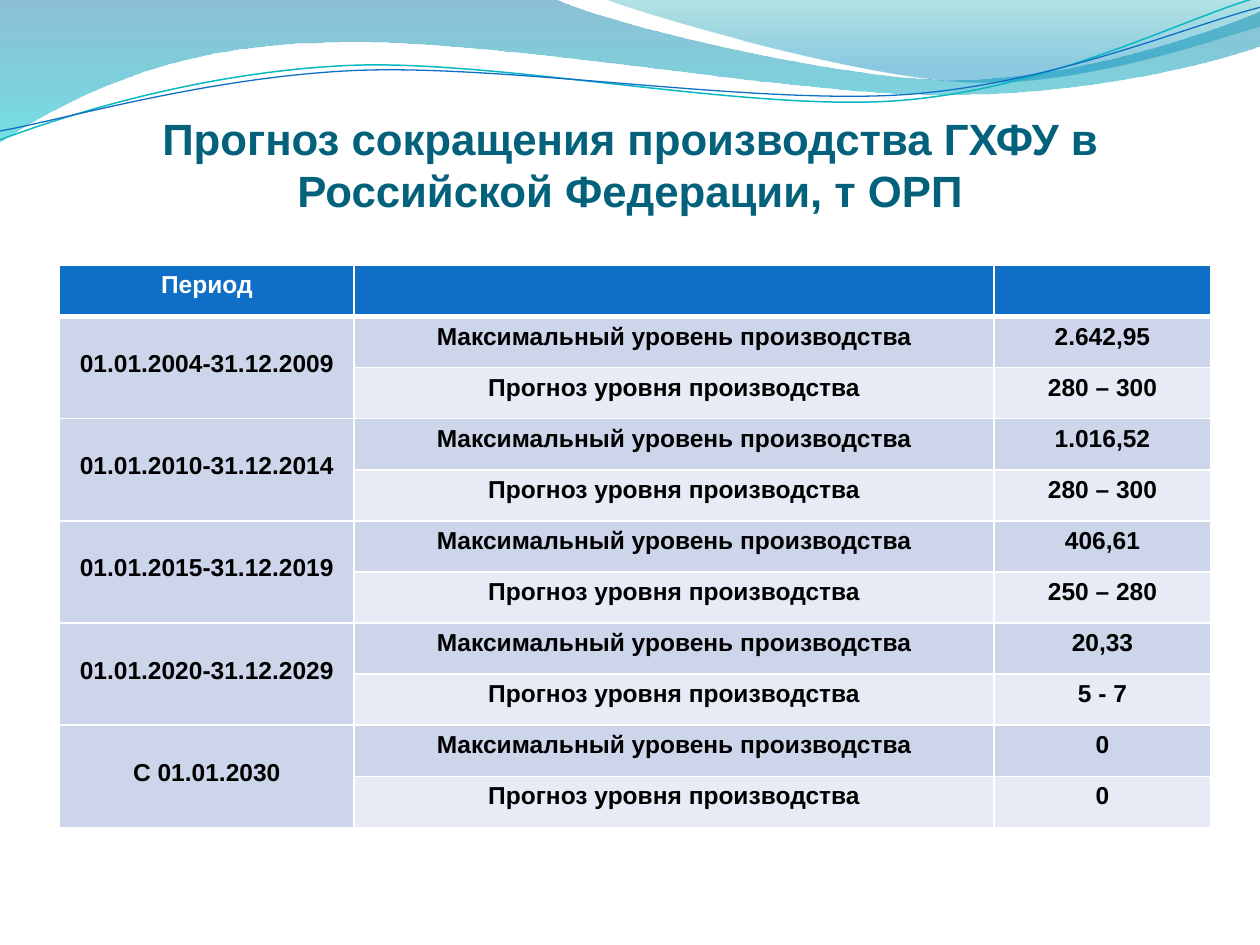
import lxml.etree
import pptx
import pptx.dml.color
import pptx.enum.text
import pptx.oxml
import pptx.oxml.ns
import pptx.util

Cm, Pt = pptx.util.Cm, pptx.util.Pt
RGB = pptx.dml.color.RGBColor
qn = pptx.oxml.ns.qn
CENTER = pptx.enum.text.PP_ALIGN.CENTER

WHITE = RGB(0xFF, 0xFF, 0xFF)
BLACK = RGB(0, 0, 0)
BLUE = RGB(0x0F, 0x6F, 0xC6)
TEAL = RGB(0x0A, 0xB8, 0xBF)
NAVY = RGB(0x04, 0x61, 0x7B)
DARK = RGB(0xCC, 0xD5, 0xEA)
PALE = RGB(0xE7, 0xEB, 0xF5)
STEEL = RGB(0x00, 0x74, 0xA1)
CYAN = RGB(0x00, 0xC6, 0xCF)
GREEN = RGB(0x00, 0xA1, 0xA9)
SKY = RGB(0x00, 0x8B, 0xBF)

# Outlines in cm: a start, then straight (2 numbers) or Bezier (6) parts
BAND = [(0, -0.03), (11.18, -0.03), (12.09, 0.43, 16.87, 1.6, 19.25, 1.6),
        (21.67, 1.6, 24.33, 0.66, 25.4, 0.23), (25.43, 0.91),
        (24.97, 1.12, 22.1, 1.93, 18.95, 1.91),
        (15.8, 1.91, 9.7, 0.71, 6.53, 0.86),
        (3.28, 0.89, 1.17, 2.11, -0.03, 2.87)]
VEIL = [(12.17, -0.03), (12.93, 0.28, 17.32, 1.57, 19.53, 1.65),
        (21.74, 1.75, 24.41, 0.81, 25.4, 0.53), (25.4, 0)]
UPPER = [(0, 2.82), (1.22, 2.36, 4.01, 1.45, 7.04, 1.32),
         (10.03, 1.19, 15.06, 2.26, 18.11, 2.03),
         (21.16, 1.8, 23.83, 0.38, 25.35, -0.05)]
LOWER = [(0, 2.64), (1.19, 2.44, 4.17, 1.55, 7.19, 1.42),
         (10.24, 1.3, 15.16, 2.11, 18.21, 1.91),
         (21.23, 1.7, 23.9, 0.53, 25.4, 0.15)]

TITLE = "Прогноз сокращения производства ГХФУ в Российской Федерации, т ОРП"
LEVELS = ["Максимальный уровень производства", "Прогноз уровня производства"]
DATA = [("01.01.2004-31.12.2009", "2.642,95", "280 – 300"),
        ("01.01.2010-31.12.2014", "1.016,52", "280 – 300"),
        ("01.01.2015-31.12.2019", "406,61", "250 – 280"),
        ("01.01.2020-31.12.2029", "20,33", "5 - 7"),
        ("С 01.01.2030", "0", "0")]
WIDTHS = [5.94, 12.9, 4.37]
ROW = 1.03


def bend(shape, parts):
    """Swap the straight stand-ins of Bezier parts for real curves."""
    left, top = shape.left, shape.top
    for node, part in zip(list(shape.element.iter(qn("a:lnTo"))), parts[1:]):
        if len(part) == 2:
            continue
        curve = lxml.etree.Element(qn("a:cubicBezTo"))
        for x, y in zip(part[::2], part[1::2]):
            lxml.etree.SubElement(curve, qn("a:pt"), x=str(Cm(x) - left),
                                  y=str(Cm(y) - top))
        node.getparent().replace(node, curve)


def draw(slide, parts, close):
    knots = [(Cm(part[-2]), Cm(part[-1])) for part in parts]
    pen = slide.shapes.build_freeform(*knots[0])
    pen.add_line_segments(knots[1:], close=close)
    shape = pen.convert_to_shape()
    bend(shape, parts)
    shape.shadow.inherit = False
    return shape


def add_wave(slide, parts, stops):
    """Fill an outline with a see-through gradient running downwards."""
    shape = draw(slide, parts, True)
    shape.line.fill.background()
    shape.fill.gradient()
    shape.fill.gradient_angle = 270
    for stop, (place, color, _) in zip(shape.fill.gradient_stops, stops):
        stop.position = place
        stop.color.rgb = color
    for node, (_, _, alpha) in zip(shape.element.iter(qn("a:srgbClr")), stops):
        lxml.etree.SubElement(node, qn("a:alpha"), val=str(alpha * 1000))


def add_curve(slide, parts, color, width):
    shape = draw(slide, parts, False)
    shape.fill.background()
    shape.line.color.rgb = color
    shape.line.width = Pt(width)


def write(frame, text, size, color):
    para = frame.paragraphs[0]
    para.alignment = CENTER
    run = para.add_run()
    run.text = text
    run.font.color.rgb = color
    style = {"name": "Arial", "size": Pt(size), "bold": True}
    for key, value in style.items():
        setattr(run.font, key, value)


def add_title(slide):
    frame = slide.shapes.add_textbox(Cm(1.27), Cm(1.96), Cm(22.86),
                                     Cm(2.41)).text_frame
    style = {"word_wrap": True, "margin_left": 0, "margin_right": 0,
             "margin_top": Cm(0.13), "margin_bottom": 0,
             "vertical_anchor": pptx.enum.text.MSO_ANCHOR.BOTTOM}
    for key, value in style.items():
        setattr(frame, key, value)
    write(frame, TITLE, 25, NAVY)


def edge(cell, row):
    """Rule a cell in white, with a heavy rule under the header."""
    widths = {"L": 1, "R": 1, "T": 3 if row == 1 else 1,
              "B": 3 if row == 0 else 1}
    space = pptx.oxml.ns.nsdecls("a")
    for side, width in widths.items():
        line = pptx.oxml.parse_xml(
            f'<a:ln{side} {space} w="{Pt(width)}"><a:solidFill>'
            f'<a:srgbClr val="{WHITE}"/></a:solidFill></a:ln{side}>')
        cell._tc.get_or_add_tcPr().append(line)


def add_grid(slide):
    rows = [("Период", "", "")]
    for period, *values in DATA:
        rows += zip((period, ""), LEVELS, values)
    table = slide.shapes.add_table(len(rows), len(WIDTHS), Cm(1.2), Cm(5.35),
                                   Cm(sum(WIDTHS)), Cm(ROW * len(rows))).table
    for column, width in zip(table.columns, WIDTHS):
        column.width = Cm(width)
    for i, texts in enumerate(rows):
        table.rows[i].height = Cm(ROW)
        for j, text in enumerate(texts):
            cell = table.cell(i, j)
            edge(cell, i)
            cell.fill.solid()
            cell.fill.fore_color.rgb = (BLUE if i == 0 else
                                        DARK if i % 2 else PALE)
            if text:
                write(cell.text_frame, text, 14, BLACK if i else WHITE)
    for i in range(1, len(rows), 2):
        cell = table.cell(i, 0)
        cell.merge(table.cell(i + 1, 0))
        cell.margin_top = Cm(0.68)


def main():
    deck = pptx.Presentation()
    deck.slide_width, deck.slide_height = Cm(25.4), Cm(19.05)
    slide = deck.slides.add_slide(deck.slide_layouts[6])
    add_wave(slide, BAND, [(0, STEEL, 45), (1, CYAN, 55)])
    add_wave(slide, VEIL, [(0, GREEN, 30), (0.8, SKY, 45)])
    add_curve(slide, UPPER, TEAL, 0.85)
    add_curve(slide, LOWER, BLUE, 0.75)
    add_title(slide)
    add_grid(slide)
    deck.save("out.pptx")


if __name__ == "__main__":
    main()
